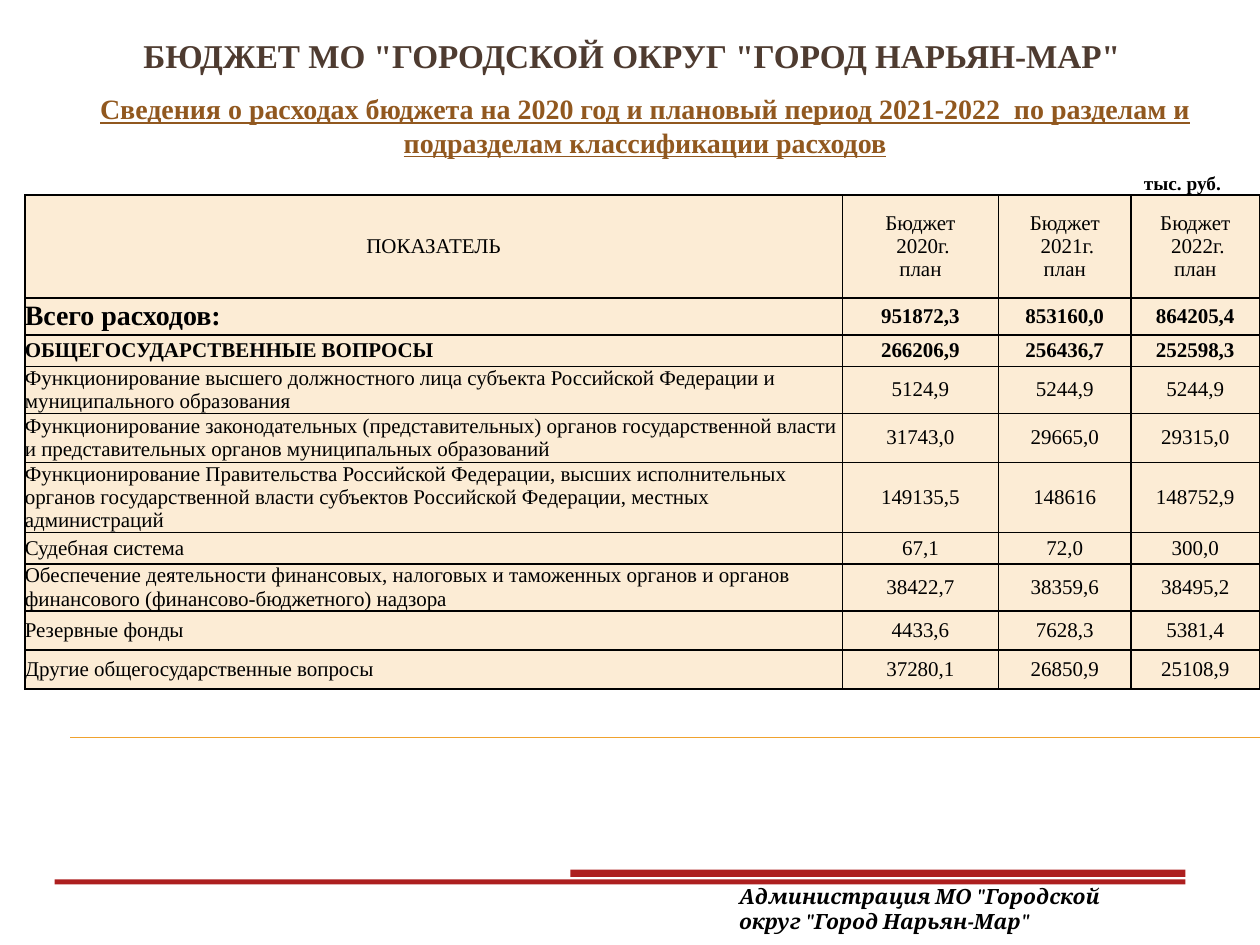
"""Build the city budget expenditure slide."""
from lxml import etree
from pptx import Presentation
from pptx import util as u
from pptx.dml.color import RGBColor
from pptx.enum import shapes, text
from pptx.oxml.ns import qn

COLORS = {
    "title": "4E3B30", "subtitle": "91581F", "ink": "000000",
    "cell": "FCECD5", "rule": "F0A22E", "bar": "AD1F1F",
}
SERIF = "Times New Roman"
COLUMNS = (16.48, 3.15, 2.67, 2.59)
YEARS = (2020, 2021, 2022)
HEADER_HEIGHT = 2.08
ROWS = (
    (0.74, "Всего расходов:", "951872,3", "853160,0", "864205,4"),
    (0.64, "ОБЩЕГОСУДАРСТВЕННЫЕ ВОПРОСЫ", "266206,9", "256436,7", "252598,3"),
    (0.79, "Функционирование высшего должностного лица субъекта Российской Федерации "
     "и муниципального образования", "5124,9", "5244,9", "5244,9"),
    (0.99, "Функционирование законодательных (представительных) органов государственной "
     "власти и представительных органов муниципальных образований",
     "31743,0", "29665,0", "29315,0"),
    (1.07, "Функционирование Правительства Российской Федерации, высших исполнительных "
     "органов государственной власти субъектов Российской Федерации, местных администраций",
     "149135,5", "148616", "148752,9"),
    (0.64, "Судебная система", "67,1", "72,0", "300,0"),
    (0.79, "Обеспечение деятельности финансовых, налоговых и таможенных органов и органов "
     "финансового (финансово-бюджетного) надзора", "38422,7", "38359,6", "38495,2"),
    (0.79, "Резервные фонды", "4433,6", "7628,3", "5381,4"),
    (0.79, "Другие общегосударственные вопросы", "37280,1", "26850,9", "25108,9"),
)
TOTAL_ROWS = 2


class BudgetSlide:
    """Hold the style and the current slide."""

    def __init__(self, page, colors, font):
        self.page, self.colors, self.font = page, colors, font

    def color(self, name):
        return RGBColor.from_string(self.colors[name])

    def add_lines(self, frame, lines, size, color="ink", bold=False, italic=False,
                  underline=False, font=None, centered=False):
        for index, line in enumerate(lines):
            para = frame.paragraphs[0] if index == 0 else frame.add_paragraph()
            para.alignment = text.PP_ALIGN.CENTER if centered else text.PP_ALIGN.LEFT
            span = para.add_run()
            span.text = line
            span.font.name = font or self.font
            span.font.size = u.Pt(size)
            span.font.bold, span.font.italic = bold, italic
            span.font.underline = underline
            span.font.color.rgb = self.color(color)

    def fill_box(self, box, place, words, size, anchor, **style):
        box.left, box.top, box.width, box.height = map(u.Cm, place)
        frame = box.text_frame
        frame.word_wrap = True
        frame.auto_size = text.MSO_AUTO_SIZE.NONE
        frame.vertical_anchor = anchor
        self.add_lines(frame, [words], size, **style)

    def title(self, place, words, size, **style):
        self.fill_box(self.page.shapes.title, place, words, size,
                      text.MSO_ANCHOR.TOP, **style)

    def label(self, place, words, size, anchor=text.MSO_ANCHOR.TOP, **style):
        box = self.page.shapes.add_textbox(*map(u.Cm, place))
        self.fill_box(box, place, words, size, anchor, **style)

    def bar(self, place, color):
        box = self.page.shapes.add_shape(shapes.MSO_SHAPE.RECTANGLE, *map(u.Cm, place))
        box.shadow.inherit = False
        box.fill.solid()
        box.fill.fore_color.rgb = self.color(color)
        box.line.fill.background()

    def rule(self, ends, color, width):
        line = self.page.shapes.add_connector(
            shapes.MSO_CONNECTOR.STRAIGHT, *map(u.Cm, ends))
        line.line.color.rgb = self.color(color)
        line.line.width = u.Pt(width)
        etree.SubElement(line._element.spPr, qn("a:effectLst"))

    def cell(self, cell, lines, size=12, insets=(0, 0), **style):
        cell.vertical_anchor = text.MSO_ANCHOR.MIDDLE
        cell.margin_left = cell.margin_right = u.Cm(insets[0])
        cell.margin_top = cell.margin_bottom = u.Cm(insets[1])
        cell.fill.solid()
        cell.fill.fore_color.rgb = self.color("cell")
        self.add_lines(cell.text_frame, lines, size, **style)
        properties = cell._tc.get_or_add_tcPr()
        for index, side in enumerate(("lnL", "lnR", "lnT", "lnB")):
            border = etree.Element(qn(f"a:{side}"), w=str(u.Pt(1)))
            paint = etree.SubElement(border, qn("a:solidFill"))
            etree.SubElement(paint, qn("a:srgbClr"), val=self.colors["ink"])
            properties.insert(index, border)

    def table(self, left, top):
        height = HEADER_HEIGHT + sum(row[0] for row in ROWS)
        table = self.page.shapes.add_table(
            len(ROWS) + 1, len(COLUMNS), u.Cm(left), u.Cm(top),
            u.Cm(sum(COLUMNS)), u.Cm(height)).table
        table.first_row = table.horz_banding = False
        for column, width in zip(table.columns, COLUMNS):
            column.width = u.Cm(width)
        table.rows[0].height = u.Cm(HEADER_HEIGHT)
        self.cell(table.cell(0, 0), ["ПОКАЗАТЕЛЬ"], insets=(0.25, 0.13), centered=True)
        for column, year in enumerate(YEARS, 1):
            self.cell(table.cell(0, column), ["Бюджет", f" {year}г.", "план"],
                      insets=(0, 0.13), centered=True)
        for number, (height, *entries) in enumerate(ROWS, 1):
            table.rows[number].height = u.Cm(height)
            for column, entry in enumerate(entries):
                self.cell(table.cell(number, column), [entry],
                          size=16 if (number, column) == (1, 0) else 12,
                          bold=number <= TOTAL_ROWS, centered=column > 0)


def main():
    deck = Presentation()
    deck.slide_width, deck.slide_height = u.Cm(25.4), u.Cm(19.05)
    slide = BudgetSlide(deck.slides.add_slide(deck.slide_layouts[5]), COLORS, SERIF)
    slide.rule((1.42, 14.86, 25.4, 14.86), "rule", 0.75)
    slide.title((0.99, 0.58, 23.5, 3.4), 'БЮДЖЕТ МО "ГОРОДСКОЙ ОКРУГ "ГОРОД НАРЬЯН-МАР"',
                19, color="title", bold=True, centered=True)
    slide.label((1.5, 1.93, 23.01, 1.4),
                "Сведения о расходах бюджета на 2020 год и плановый период 2021-2022  "
                "по разделам и подразделам классификации расходов",
                16, text.MSO_ANCHOR.BOTTOM, color="subtitle", bold=True,
                underline=True, centered=True)
    slide.table(0.5, 3.93)
    slide.bar((11.5, 17.53, 12.4, 0.15), "bar")
    slide.bar((1.1, 17.73, 22.8, 0.1), "bar")
    slide.label((14.65, 17.68, 8.86, 1.27),
                'Администрация МО "Городской округ "Город Нарьян-Мар"',
                12, font="Cambria", bold=True, italic=True)
    slide.label((22.81, 3.33, 2.59, 0.74), "тыс. руб.", 11, bold=True)
    deck.save("out.pptx")


if __name__ == "__main__":
    main()
